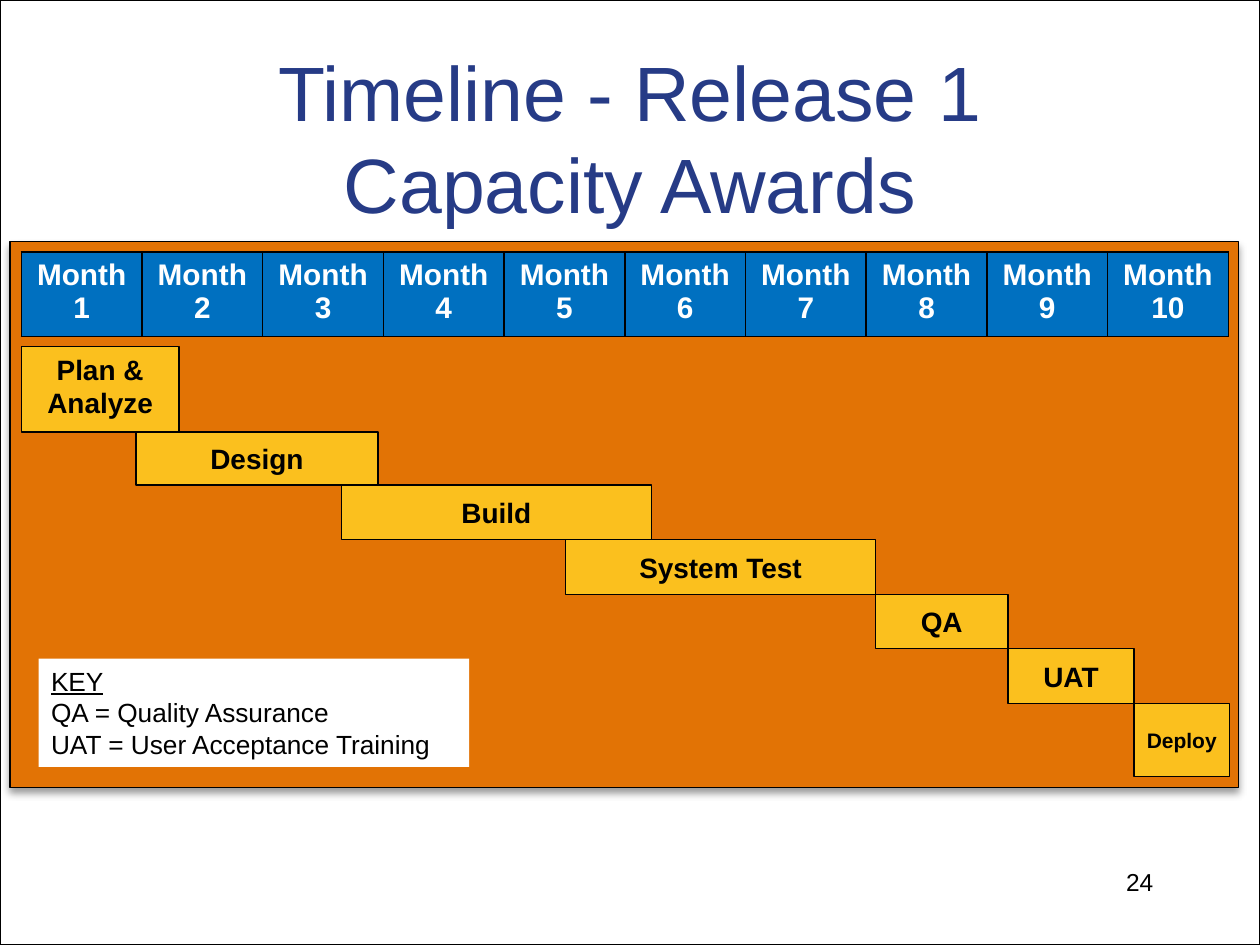
import pptx
import pptx.util
import pptx.dml.color
import pptx.enum.shapes
import pptx.enum.text
import pptx.oxml
import pptx.oxml.ns
from pptx.util import Cm, Pt

COLORS = {"white": "FFFFFF", "black": "000000", "panel": "E27305",
          "bar": "FBC01E", "month": "0070C0", "title": "263B86"}
ALIGN = pptx.enum.text.PP_ALIGN
ANCHOR = pptx.enum.text.MSO_ANCHOR
NS = pptx.oxml.ns.nsdecls("a")
SHADOW = (f'<a:effectLst {NS}><a:outerShdw blurRad="{Pt(4)}" dist="{Pt(3)}" '
          'dir="5400000" rotWithShape="0"><a:srgbClr val="{color}">'
          '<a:alpha val="40000"/></a:srgbClr></a:outerShdw></a:effectLst>')
BORDER = (f'<a:{{side}} {NS} w="{Pt(1)}"><a:solidFill>'
          '<a:srgbClr val="{color}"/></a:solidFill></a:{side}>')


def rgb(name):
    return pptx.dml.color.RGBColor.from_string(COLORS[name])


class Deck:
    font = "Arial"

    def __init__(self):
        self.prs = pptx.Presentation()
        self.prs.slide_width, self.prs.slide_height = Cm(25.4), Cm(19.05)
        self.slide = self.prs.slides.add_slide(self.prs.slide_layouts[5])

    def label(self, frame, text, size, color="black", bold=False,
              align=ALIGN.CENTER):
        frame.text = text
        for para in frame.paragraphs:
            para.alignment = align
            font = para.font
            font.name, font.size, font.bold = self.font, Pt(size), bold
            font.color.rgb = rgb(color)

    def rect(self, box, fill, line=True):
        shape = self.slide.shapes.add_shape(
            pptx.enum.shapes.MSO_SHAPE.RECTANGLE, *map(Cm, box))
        shape.shadow.inherit = False
        shape.fill.solid()
        shape.fill.fore_color.rgb = rgb(fill)
        if line:
            shape.line.color.rgb = rgb("black")
            shape.line.width = Pt(0.75)
        else:
            shape.line.fill.background()
        return shape

    def panel(self, box):
        """Add the chart's backing with a soft shadow below it."""
        props = self.rect(box, "panel").element.spPr
        props.remove(props.find(pptx.oxml.ns.qn("a:effectLst")))
        props.append(pptx.oxml.parse_xml(
            SHADOW.format(color=COLORS["black"])))

    def title(self, box, text):
        shape = self.slide.shapes.title
        shape.left, shape.top, shape.width, shape.height = map(Cm, box)
        # Bring the title in front of the page frame
        self.slide.shapes.element.append(shape.element)
        frame = shape.text_frame
        frame.auto_size = pptx.enum.text.MSO_AUTO_SIZE.NONE
        frame.vertical_anchor = ANCHOR.MIDDLE
        self.label(frame, text, 44, "title")

    def number(self, box, text):
        frame = self.slide.shapes.add_textbox(*map(Cm, box)).text_frame
        frame.word_wrap = True
        self.label(frame, text, 14, align=ALIGN.RIGHT)

    def key(self, box, lines):
        frame = self.rect(box, "white", line=False).text_frame
        frame.vertical_anchor = ANCHOR.TOP
        self.label(frame, "\n".join(lines), 15, align=ALIGN.LEFT)
        frame.paragraphs[0].runs[0].font.underline = True

    def months(self, box, count):
        table = self.slide.shapes.add_table(1, count, *map(Cm, box)).table
        table.horz_banding = False
        for num, cell in enumerate(table.iter_cells(), 1):
            self.label(cell.text_frame, f"Month {num}", 17, "white", True)
            props = cell._tc.get_or_add_tcPr()
            for side in ("lnL", "lnR", "lnT", "lnB"):
                props.append(pptx.oxml.parse_xml(
                    BORDER.format(side=side, color=COLORS["black"])))
            cell.fill.solid()
            cell.fill.fore_color.rgb = rgb("month")

    def bar(self, box, text, size, anchor):
        frame = self.rect(box, "bar").text_frame
        frame.margin_left = frame.margin_right = Cm(0.15)
        frame.vertical_anchor = anchor
        self.label(frame, text, size, bold=True)


def main():
    deck = Deck()
    deck.rect((0, 0, 25.4, 19.05), "white")
    deck.panel((0.2, 4.87, 24.77, 11))
    deck.title((1.9, 1.48, 21.6, 2.54), "Timeline - Release 1\vCapacity Awards")
    deck.number((18.2, 17.35, 5.3, 1.27), "24")
    deck.key((0.78, 13.28, 8.68, 2.18),
             ["KEY", "QA = Quality Assurance", "UAT = User Acceptance Training"])
    deck.months((0.43, 5.08, 24.33, 1.7), 10)

    # Phase, left, width, height; each bar starts where the last one ends
    phases = [("Plan & Analyze", 0.43, 3.18, 1.73), ("Design", 2.74, 4.88, 1.07),
              ("Build", 6.88, 6.25, 1.1), ("System Test", 11.4, 6.25, 1.1),
              ("QA", 17.65, 2.67, 1.1), ("UAT", 20.32, 2.54, 1.1),
              ("Deploy", 22.86, 1.93, 1.47)]
    top = 6.98
    for name, left, width, height in phases:
        size = 12 if name == "Deploy" else 16
        anchor = ANCHOR.TOP if name == "Plan & Analyze" else ANCHOR.MIDDLE
        deck.bar((left, top, width, height), name, size, anchor)
        top += height
    deck.prs.save("out.pptx")


if __name__ == "__main__":
    main()
